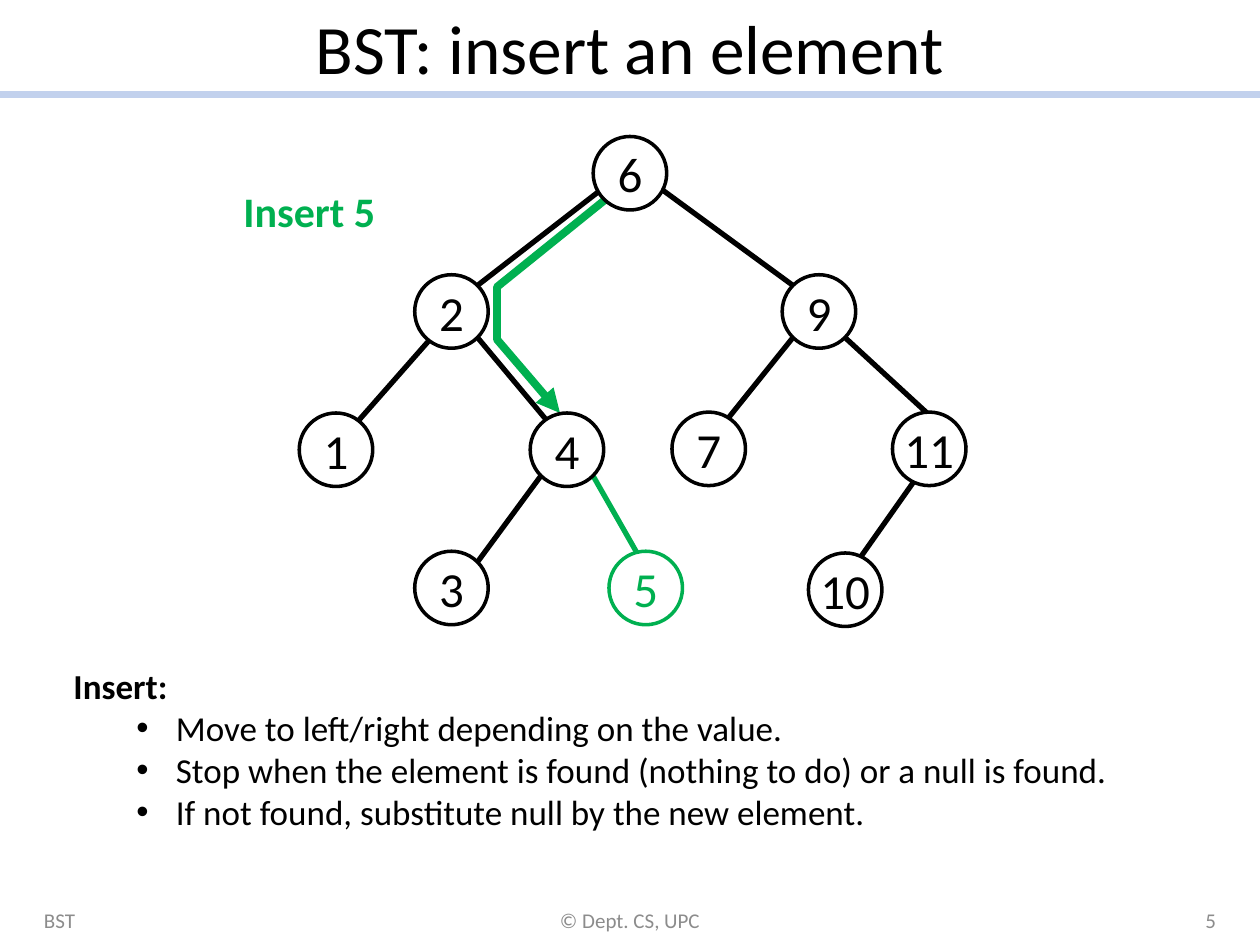
from lxml import etree
from pptx import Presentation
from pptx.dml.color import RGBColor
from pptx.enum.shapes import MSO_CONNECTOR, MSO_SHAPE
from pptx.enum.text import MSO_ANCHOR, PP_ALIGN
from pptx.oxml.ns import qn
from pptx.util import Pt

LINE, OVAL = MSO_CONNECTOR.STRAIGHT, MSO_SHAPE.OVAL
MIDDLE, TOP = MSO_ANCHOR.MIDDLE, MSO_ANCHOR.TOP
LEFT, CENTER, RIGHT = PP_ALIGN.LEFT, PP_ALIGN.CENTER, PP_ALIGN.RIGHT
BLACK, GREEN, GRAY, WHITE, RULE = "000000", "00B050", "8C8C8C", "FFFFFF", "C2D1ED"
SIZE = 42    # node diameter
DIAG = 14.9  # from a node's centre to its 45 degree point, on each axis


def write(shape, lines, size, tint, align, anchor, side, wrap=True, bold=False):
    frame = shape.text_frame
    form = {"word_wrap": wrap, "vertical_anchor": anchor,
            "margin_left": Pt(side), "margin_right": Pt(side),
            "margin_top": Pt(3.6), "margin_bottom": Pt(3.6)}
    for key, value in form.items():
        setattr(frame, key, value)
    frame.text = "\n".join(lines)
    for para in frame.paragraphs:
        para.alignment = align
        font = para.runs[0].font
        for key, value in {"name": "Calibri", "size": Pt(size), "bold": bold}.items():
            setattr(font, key, value)
        font.color.rgb = RGBColor.from_string(tint)


def link(x1, y1, x2, y2, tint, width):
    line = slide.shapes.add_connector(LINE, Pt(x1), Pt(y1), Pt(x2), Pt(y2))
    line.line.color.rgb = RGBColor.from_string(tint)
    line.line.width = Pt(width)
    etree.SubElement(line._element.spPr, qn("a:effectLst"))


deck = Presentation()
deck.slide_width, deck.slide_height = Pt(720), Pt(540)
slide = deck.slides.add_slide(deck.slide_layouts[5])

# Title and rule
title = slide.shapes.title
for key, value in {"left": 36, "top": 0, "width": 648, "height": 54}.items():
    setattr(title, key, Pt(value))
write(title, ["BST: insert an element"], 39.6, BLACK, CENTER, MIDDLE, 7.2)
link(0, 54, 720, 54, RULE, 4)

# Search path
build = slide.shapes.build_freeform(346.3, 114.5, scale=12700)
build.add_line_segments([(284.4, 164.2), (283.7, 193.7), (319.7, 236.2)], close=False)
trail = build.convert_to_shape()
trail.shadow.inherit = False
trail.fill.background()
trail.line.color.rgb = RGBColor.from_string(GREEN)
trail.line.width = Pt(4.5)
etree.SubElement(trail.line._get_or_add_ln(), qn("a:tailEnd"), type="triangle")

# Node centres
nodes = {6: (360, 99), 2: (258, 178), 9: (468, 178), 1: (192, 257), 4: (324, 257),
         7: (405, 256.5), 11: (531, 256.5), 3: (258, 336), 5: (369, 336), 10: (483, 337)}

# Edges: parent, its corner, child, its corner (in steps of DIAG)
edges = [(6, (1, -1), 2, (1, -1)), (6, (-1, -1), 9, (-1, -1)),
         (2, (1, -1), 1, (-1, 1)), (2, (1, 1), 4, (1, 1)),
         (9, (-1, 1), 7, (-1, 1)), (9, (1, 1), 11, (1.41, 0)),
         (4, (-1, 1), 3, (1, -1)), (4, (1, 1), 5, (1, 1)),
         (11, (1, -1), 10, (-1, 1))]
for top, (dx, dy), low, (ex, ey) in edges:
    (x1, y1), (x2, y2) = nodes[top], nodes[low]
    link(x1 + dx * DIAG, y1 + dy * DIAG, x2 + ex * DIAG, y2 + ey * DIAG,
         GREEN if low == 5 else BLACK, 3)

# Nodes, over the ends of the edges
for num, (x, y) in nodes.items():
    tint = GREEN if num == 5 else BLACK
    node = slide.shapes.add_shape(OVAL, Pt(x - SIZE / 2), Pt(y - SIZE / 2),
                                  Pt(SIZE), Pt(SIZE))
    node.shadow.inherit = False
    node.fill.solid()
    node.fill.fore_color.rgb = RGBColor.from_string(WHITE)
    node.line.color.rgb = RGBColor.from_string(tint)
    node.line.width = Pt(2)
    write(node, [str(num)], 28, tint, CENTER, MIDDLE, 0)

# Caption
label = slide.shapes.add_textbox(Pt(132), Pt(102.5), Pt(91), Pt(36))
write(label, ["Insert 5"], 24, GREEN, LEFT, TOP, 7.2, wrap=False, bold=True)

# Steps
steps = slide.shapes.add_textbox(Pt(42), Pt(376), Pt(654), Pt(104))
write(steps, ["Insert:", "Move to left/right depending on the value.",
              "Stop when the element is found (nothing to do) or a null is found.",
              "If not found, substitute null by the new element."],
      20, BLACK, LEFT, TOP, 0)
head, *items = steps.text_frame.paragraphs
head.runs[0].font.bold = True
for item in items:
    item.level = 1
    props = item._p.get_or_add_pPr()
    props.set("marL", str(Pt(58.5)))
    props.set("indent", str(Pt(-22.5)))
    etree.SubElement(props, qn("a:buFont"), typeface="Arial")
    etree.SubElement(props, qn("a:buChar"), char="•")

# Footer
for text, x, width, align in [("BST", 18, 168, LEFT), ("© Dept. CS, UPC", 246, 228, CENTER),
                              ("5", 534, 168, RIGHT)]:
    foot = slide.shapes.add_textbox(Pt(x), Pt(511), Pt(width), Pt(29))
    write(foot, [text], 12, GRAY, align, MIDDLE, 7.2)

deck.save("out.pptx")
